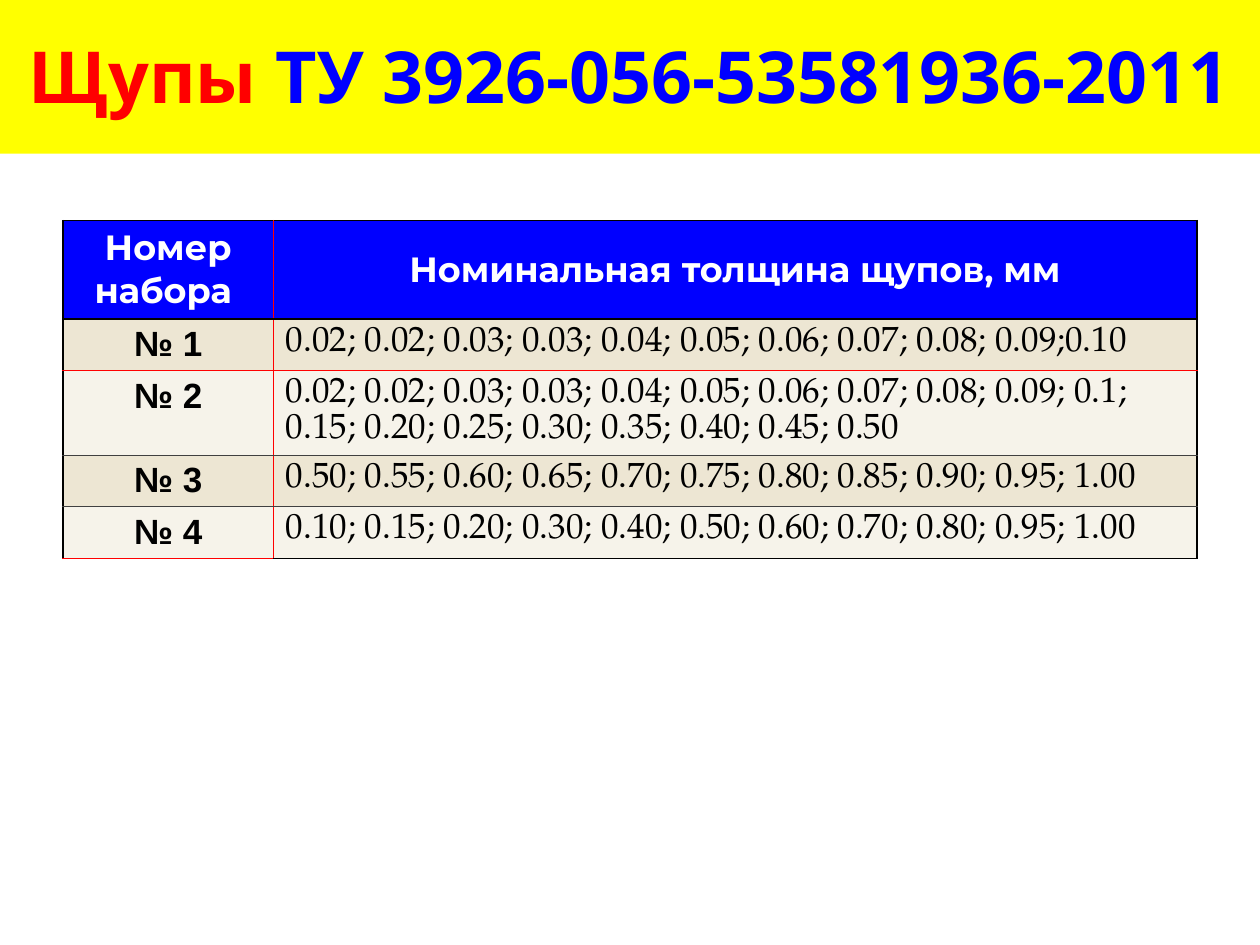
import pptx
import pptx.dml.color
import pptx.enum.shapes
import pptx.enum.text
import pptx.oxml.ns
import pptx.util
from lxml import etree
from pptx.util import Inches

BLACK, WHITE, RED, BLUE, GRAY = "000000", "FFFFFF", "FF0000", "0000FF", "404040"
CENTER = pptx.enum.text.PP_ALIGN.CENTER
LEFT = pptx.enum.text.PP_ALIGN.LEFT
MIDDLE = pptx.enum.text.MSO_ANCHOR.MIDDLE
TOP = pptx.enum.text.MSO_ANCHOR.TOP


def rgb(value):
    return pptx.dml.color.RGBColor.from_string(value)


def add_span(para, text, font, size, color, bold):
    span = para.add_run()
    span.text = text
    span.font.name = font
    span.font.size = pptx.util.Pt(size)
    span.font.bold = bold
    span.font.color.rgb = rgb(color)


deck = pptx.Presentation()
deck.slide_width, deck.slide_height = Inches(10), Inches(7.5)
page = deck.slides.add_slide(deck.slide_layouts[6])

# Title band
band = page.shapes.add_shape(pptx.enum.shapes.MSO_SHAPE.RECTANGLE,
                             Inches(0), Inches(-0.03), Inches(10), Inches(1.25))
band.shadow.inherit = False
band.fill.solid()
band.fill.fore_color.rgb = rgb("FFFF00")
band.line.fill.background()
band.text_frame.word_wrap = True
band.text_frame.vertical_anchor = MIDDLE
title = band.text_frame.paragraphs[0]
title.alignment = CENTER
add_span(title, "Щупы ", "Open Sans", 41, RED, True)
add_span(title, "ТУ 3926-056-53581936-2011", "Open Sans", 41, BLUE, True)

# Table of gauge sets
rows = [
    ("Номер набора ", ["Номинальная толщина щупов, мм"]),
    ("№ 1", ["0.02; 0.02; 0.03; 0.03; 0.04; 0.05; 0.06; 0.07; 0.08; 0.09;0.10"]),
    ("№ 2", ["0.02; 0.02; 0.03; 0.03; 0.04; 0.05; 0.06; 0.07; 0.08; 0.09; 0.1;",
             "0.15; 0.20; 0.25; 0.30; 0.35; 0.40; 0.45; 0.50"]),
    ("№ 3", ["0.50; 0.55; 0.60; 0.65; 0.70; 0.75; 0.80; 0.85; 0.90; 0.95; 1.00"]),
    ("№ 4", ["0.10; 0.15; 0.20; 0.30; 0.40; 0.50; 0.60; 0.70; 0.80; 0.95; 1.00"]),
]
column_widths = [1.67, 7.33]
row_heights = [0.78, 0.41, 0.66, 0.41, 0.41]
row_fills = [BLUE, "EDE6D3", "F6F3EA", "EDE6D3", "F6F3EA"]
# Rules as (color, width): verticals left to right, horizontals top to bottom
verticals = [(BLACK, 1), (RED, 1), (BLACK, 1)]
inner_rules = [(BLACK, 1), (BLACK, 1), (RED, 0.5), (GRAY, 0.5), (GRAY, 0.5)]
horizontals = [inner_rules + [(RED, 1)], inner_rules + [(BLACK, 1)]]

table = page.shapes.add_table(len(rows), 2, Inches(0.5), Inches(1.75),
                              Inches(9), Inches(sum(row_heights))).table
for column, width in zip(table.columns, column_widths):
    column.width = Inches(width)
for row, height in zip(table.rows, row_heights):
    row.height = Inches(height)

for r, (number, sizes) in enumerate(rows):
    for c, lines in enumerate([[number], sizes]):
        cell = table.cell(r, c)
        is_header = r == 0
        is_sizes = c == 1 and not is_header

        properties = cell._tc.get_or_add_tcPr()
        sides = {"L": verticals[c], "R": verticals[c + 1],
                 "T": horizontals[c][r], "B": horizontals[c][r + 1]}
        for side, (color, width) in sides.items():
            rule = etree.SubElement(properties, pptx.oxml.ns.qn(f"a:ln{side}"),
                                    w=str(pptx.util.Pt(width)))
            paint = etree.SubElement(rule, pptx.oxml.ns.qn("a:solidFill"))
            etree.SubElement(paint, pptx.oxml.ns.qn("a:srgbClr"), val=color)
        cell.fill.solid()
        cell.fill.fore_color.rgb = rgb(row_fills[r])
        cell.vertical_anchor = MIDDLE if is_header else TOP

        font = "Montserrat" if is_header else "TeX Gyre Pagella" if is_sizes else "Arial"
        for i, line in enumerate(lines):
            frame = cell.text_frame
            para = frame.add_paragraph() if i else frame.paragraphs[0]
            para.alignment = LEFT if is_sizes else CENTER
            if is_sizes:
                para.line_spacing = pptx.util.Pt(20.5)
            add_span(para, line, font, 20, WHITE if is_header else BLACK, not is_sizes)

deck.save("out.pptx")
